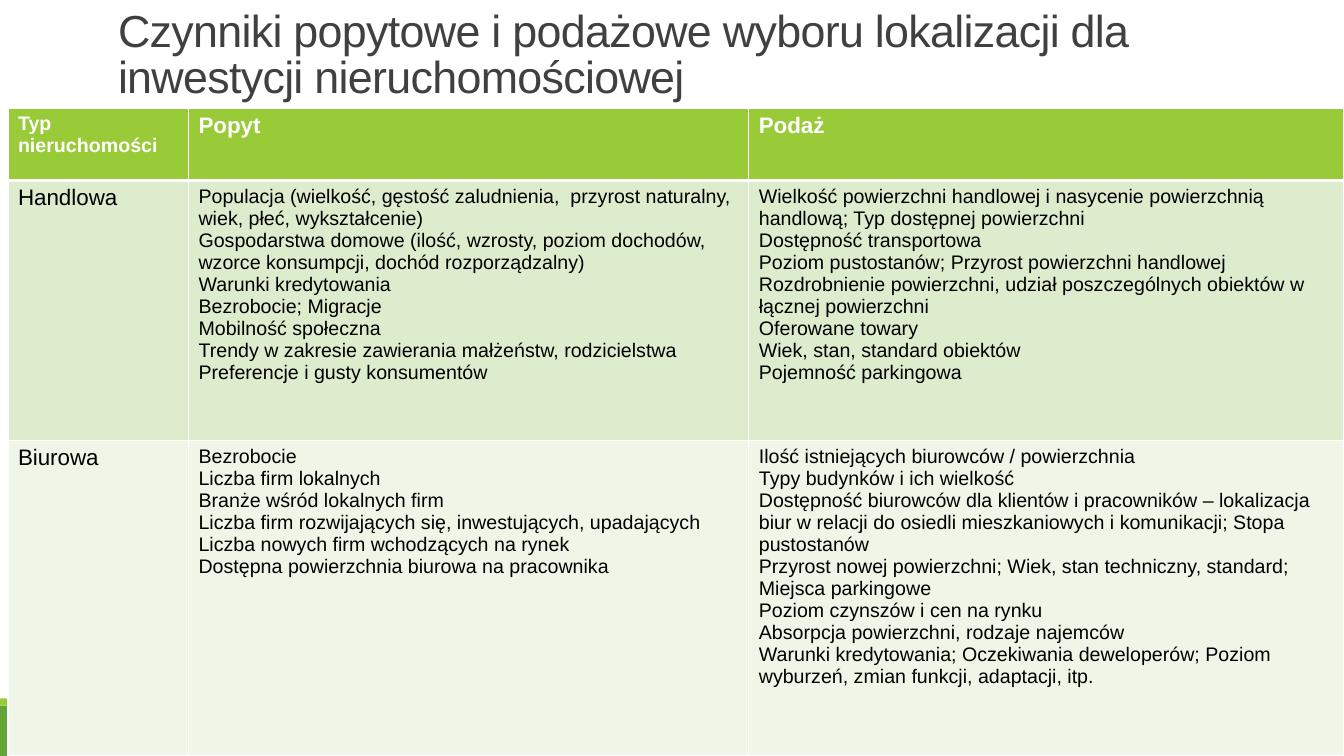
from dataclasses import dataclass

from lxml.etree import SubElement
from pptx import Presentation
from pptx.dml.color import RGBColor
from pptx.enum.shapes import MSO_SHAPE
from pptx.enum.text import MSO_ANCHOR, MSO_AUTO_SIZE, PP_ALIGN
from pptx.oxml.ns import qn
from pptx.util import Cm, Pt


@dataclass(frozen=True)
class Theme:
    font: str = "Arial"
    lime: str = "99CB38"
    green: str = "63A537"
    dark: str = "404040"
    black: str = "000000"
    white: str = "FFFFFF"
    bands: tuple = ("99CB38", "DEECCE", "EFF6E8")
    title: int = 32
    label: int = 16
    body: int = 14


@dataclass(frozen=True)
class Box:
    left: float
    top: float
    width: float
    height: float

    def place(self):
        return Cm(self.left), Cm(self.top), Cm(self.width), Cm(self.height)


THEME = Theme()
PAGE = Box(0, 0, 33.87, 19.05)
TITLE = "Czynniki popytowe i podażowe wyboru lokalizacji dla inwestycji nieruchomościowej"
HEADS = ["Typ nieruchomości", "Popyt", "Podaż"]
SHOP = [
    "Handlowa",
    """Populacja (wielkość, gęstość zaludnienia,  przyrost naturalny, wiek, płeć, wykształcenie)
Gospodarstwa domowe (ilość, wzrosty, poziom dochodów, wzorce konsumpcji, dochód rozporządzalny)
Warunki kredytowania
Bezrobocie; Migracje
Mobilność społeczna
Trendy w zakresie zawierania małżeństw, rodzicielstwa
Preferencje i gusty konsumentów""",
    """Wielkość powierzchni handlowej i nasycenie powierzchnią handlową; Typ dostępnej powierzchni
Dostępność transportowa
Poziom pustostanów; Przyrost powierzchni handlowej
Rozdrobnienie powierzchni, udział poszczególnych obiektów w łącznej powierzchni
Oferowane towary
Wiek, stan, standard obiektów
Pojemność parkingowa""",
]
OFFICE = [
    "Biurowa",
    """Bezrobocie
Liczba firm lokalnych
Branże wśród lokalnych firm
Liczba firm rozwijających się, inwestujących, upadających
Liczba nowych firm wchodzących na rynek
Dostępna powierzchnia biurowa na pracownika""",
    """Ilość istniejących biurowców / powierzchnia
Typy budynków i ich wielkość
Dostępność biurowców dla klientów i pracowników – lokalizacja biur w relacji do osiedli mieszkaniowych i komunikacji; Stopa pustostanów
Przyrost nowej powierzchni; Wiek, stan techniczny, standard; Miejsca parkingowe
Poziom czynszów i cen na rynku
Absorpcja powierzchni, rodzaje najemców
Warunki kredytowania; Oczekiwania deweloperów; Poziom wyburzeń, zmian funkcji, adaptacji, itp.""",
]
ROWS = [HEADS, SHOP, OFFICE]
COL_PARTS = (4.55, 14.12, 14.99)
ROW_PARTS = (1.83, 6.55, 7.95)


def style(run, size, color, bold=False):
    run.font.name = THEME.font
    run.font.size = Pt(size)
    run.font.bold = bold
    run.font.color.rgb = RGBColor.from_string(color)


def add_title(slide, box):
    title = slide.shapes.title
    title.left, title.top, title.width, title.height = box.place()
    frame = title.text_frame
    frame.text = TITLE
    frame.word_wrap = True
    frame.auto_size = MSO_AUTO_SIZE.NONE
    frame.vertical_anchor = MSO_ANCHOR.BOTTOM
    para = frame.paragraphs[0]
    para.alignment = PP_ALIGN.LEFT
    para.line_spacing = 0.85
    run = para.runs[0]
    style(run, THEME.title, THEME.dark)
    run.font._element.set("spc", "-50")


def add_base(slide, box):
    strip = 0.18
    bands = (
        (Box(box.left, box.top + strip, box.width, box.height - strip), THEME.green),
        (Box(box.left, box.top, box.width, strip), THEME.lime),
    )
    for part, color in bands:
        bar = slide.shapes.add_shape(MSO_SHAPE.RECTANGLE, *part.place())
        bar.shadow.inherit = False
        bar.fill.solid()
        bar.fill.fore_color.rgb = RGBColor.from_string(color)
        bar.line.fill.background()


def set_edges(cell, row):
    widths = {"lnL": 1, "lnR": 1, "lnT": 3 if row == 1 else 1, "lnB": 3 if row == 0 else 1}
    props = cell._tc.get_or_add_tcPr()
    for side, width in widths.items():
        line = SubElement(props, qn(f"a:{side}"), w=str(Pt(width)))
        fill = SubElement(line, qn("a:solidFill"))
        SubElement(fill, qn("a:srgbClr"), val=THEME.white)


def fill_cell(cell, text, row, col):
    set_edges(cell, row)
    cell.fill.solid()
    cell.fill.fore_color.rgb = RGBColor.from_string(THEME.bands[row])
    cell.text_frame.text = text
    head = row == 0
    large = head != (col == 0)
    size = THEME.label if large else THEME.body
    color = THEME.white if head else THEME.black
    for para in cell.text_frame.paragraphs:
        for run in para.runs:
            style(run, size, color, head)


def add_grid(slide, box):
    table = slide.shapes.add_table(len(ROWS), len(HEADS), *box.place()).table
    for col, part in zip(table.columns, COL_PARTS):
        col.width = Cm(box.width * part / sum(COL_PARTS))
    for row, part in zip(table.rows, ROW_PARTS):
        row.height = Cm(box.height * part / sum(ROW_PARTS))
    for row, texts in enumerate(ROWS):
        for col, text in enumerate(texts):
            fill_cell(table.cell(row, col), text, row, col)


def main():
    deck = Presentation()
    deck.slide_width, deck.slide_height = Cm(PAGE.width), Cm(PAGE.height)
    slide = deck.slides.add_slide(deck.slide_layouts[5])
    add_base(slide, Box(0, 17.6, PAGE.width, 1.45))
    add_title(slide, Box(2.72, 0.3, 27.94, 2.41))
    add_grid(slide, Box(0.2, 2.72, 33.66, 16.33))
    deck.save("out.pptx")


if __name__ == "__main__":
    main()
